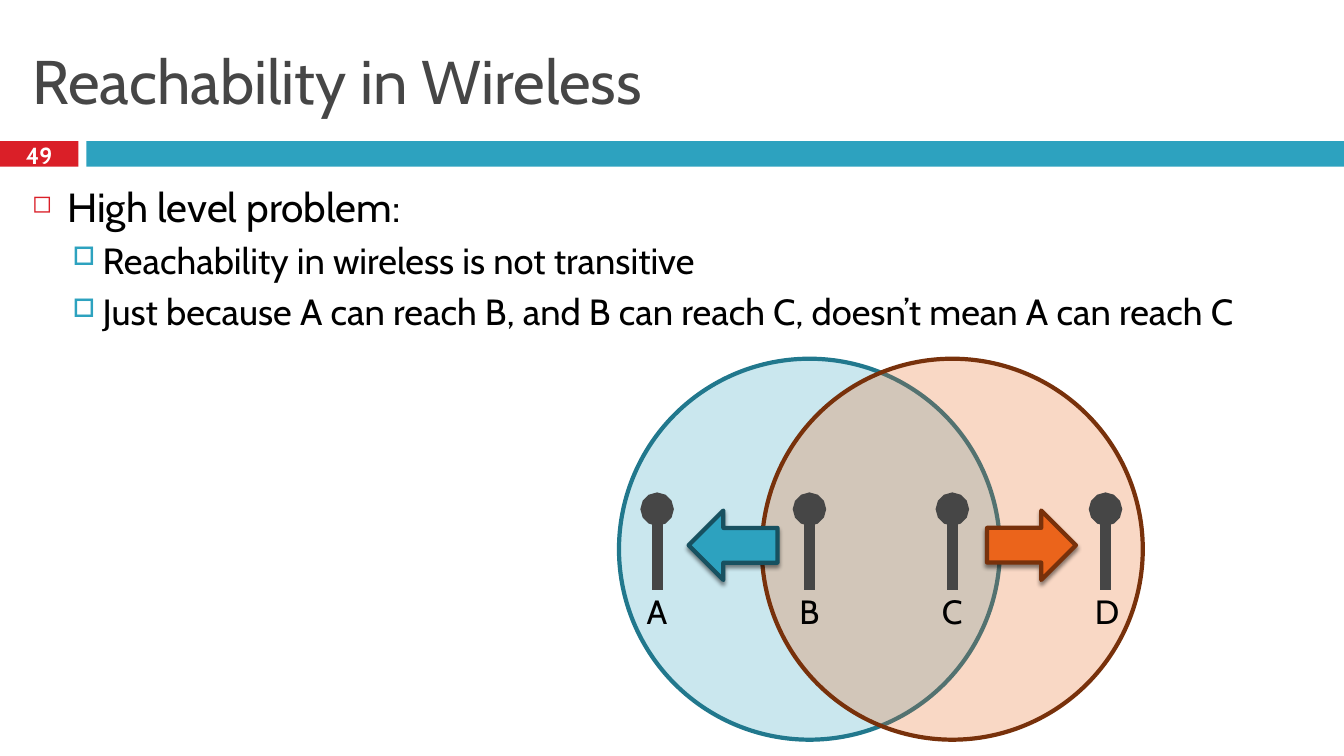
from lxml import etree
from pptx import Presentation
from pptx.dml.color import RGBColor
from pptx.enum import shapes, text
from pptx.oxml.ns import qn
from pptx.util import Cm, Pt

FONT = "Cabin"
WHITE = RGBColor(0xFF, 0xFF, 0xFF)
BLACK = RGBColor(0, 0, 0)
GRAY = RGBColor(0x46, 0x46, 0x46)
RED = RGBColor(0xDA, 0x1F, 0x28)
TEAL = RGBColor(0x2D, 0xA2, 0xBF)
TEAL_EDGE = RGBColor(0x21, 0x78, 0x8D)
TEAL_DARK = RGBColor(0x17, 0x51, 0x60)
ORANGE = RGBColor(0xEB, 0x64, 0x1B)
ORANGE_DARK = RGBColor(0x78, 0x31, 0x0B)

# text, size, space before, indent (cm), hanging (cm), bullet, its colour, its size in %
BULLETS = [("High level problem:", 29, 7, 0.89, 0.89, "◻", RED, 60)] + [
    (line, 26, 5.5, 1.78, 0.76, "□", TEAL, 70)
    for line in (
        "Reachability in wireless is not transitive",
        "Just because A can reach B, and B can reach C, doesn’t mean A can reach C",
    )
]
STATIONS = [("A", 16.56), ("B", 20.4), ("C", 24.0), ("D", 27.86)]


def sub(parent, tag, **attrs):
    el = etree.SubElement(parent, qn(tag))
    for name, value in attrs.items():
        el.set(name, str(value))
    return el


def add_run(p, words, size, color=BLACK, bold=False):
    r = p.add_run()
    r.text = words
    r.font.name, r.font.size, r.font.bold = FONT, Pt(size), bold
    r.font.color.rgb = color


def add_frame(parent, x, y, w, h, wrap=True, anchor=text.MSO_ANCHOR.TOP):
    tf = parent.add_textbox(Cm(x), Cm(y), Cm(w), Cm(h)).text_frame
    tf.word_wrap, tf.vertical_anchor = wrap, anchor
    return tf


def add_text(parent, words, x, y, w, h, size, align=text.PP_ALIGN.LEFT,
             wrap=True, anchor=text.MSO_ANCHOR.MIDDLE, **font):
    tf = add_frame(parent, x, y, w, h, wrap, anchor)
    tf.paragraphs[0].alignment = align
    add_run(tf.paragraphs[0], words, size, **font)


def add_bullets(parent, items, x, y, w, h):
    tf = add_frame(parent, x, y, w, h)
    for i, (words, size, before, indent, hang, char, color, pct) in enumerate(items):
        p = tf.add_paragraph() if i else tf.paragraphs[0]
        p.space_before = Pt(before)
        p.level = int(i > 0)
        pPr = p._p.get_or_add_pPr()
        pPr.set("marL", str(Cm(indent)))
        pPr.set("indent", str(-Cm(hang)))
        sub(sub(pPr, "a:buClr"), "a:srgbClr", val=color)
        sub(pPr, "a:buSzPct", val=pct * 1000)
        sub(pPr, "a:buChar", char=char)
        add_run(p, words, size)


def add_shape(parent, kind, x, y, w, h, fill, edge=None):
    sp = parent.add_shape(kind, Cm(x), Cm(y), Cm(w), Cm(h))
    sp.shadow.inherit = False
    sp.fill.solid()
    sp.fill.fore_color.rgb = fill
    if edge is None:
        sp.line.fill.background()
    else:
        sp.line.color.rgb, sp.line.width = edge, Pt(3)
    return sp


def add_range(parent, x, fill, edge):
    """Translucent circle showing how far a station's signal carries."""
    sp = add_shape(parent, shapes.MSO_SHAPE.OVAL, x, 9.04, 9.6, 9.6, fill, edge)
    color = sp._element.spPr.find(qn("a:solidFill")).find(qn("a:srgbClr"))
    sub(color, "a:alpha", val=25000)


def add_arrow(parent, x, rotation, fill, edge):
    sp = add_shape(parent, shapes.MSO_SHAPE.UP_ARROW, x, 12.62, 1.75, 2.24, fill, edge)
    sp.rotation = rotation
    shadow = sub(sp._element.spPr.find(qn("a:effectLst")), "a:outerShdw",
                 blurRad=Pt(3), dist=Pt(2.4), dir=90 * 60000, rotWithShape=0)
    sub(sub(shadow, "a:srgbClr", val=BLACK), "a:alpha", val=45000)


def add_station(parent, name, x):
    """Antenna with a round head, grouped with its letter."""
    group = parent.add_group_shape().shapes
    mast = group.add_connector(shapes.MSO_CONNECTOR.STRAIGHT,
                               Cm(x), Cm(12.83), Cm(x), Cm(14.86))
    mast.line.color.rgb, mast.line.width = GRAY, Pt(8)
    sub(mast.line._get_or_add_ln(), "a:headEnd", type="oval")
    sub(mast._element.spPr, "a:effectLst")
    add_text(group, name, x - 0.52, 14.76, 1.04, 1.27, 24,
             align=text.PP_ALIGN.CENTER, wrap=False, anchor=text.MSO_ANCHOR.TOP)


def main():
    prs = Presentation()
    prs.slide_width, prs.slide_height = Cm(33.87), Cm(19.05)
    s = prs.slides.add_slide(prs.slide_layouts[6]).shapes

    add_shape(s, shapes.MSO_SHAPE.RECTANGLE, 0, 3.56, 1.98, 0.64, RED)
    add_shape(s, shapes.MSO_SHAPE.RECTANGLE, 2.18, 3.56, 31.69, 0.64, TEAL)
    add_text(s, "Reachability in Wireless", 0.56, 0.64, 32.74, 2.74, 44, color=GRAY)
    add_text(s, "49", 0, 3.48, 1.98, 0.84, 16.6, align=text.PP_ALIGN.CENTER,
             color=WHITE, bold=True)
    add_bullets(s, BULLETS, 0.56, 4.45, 32.74, 14.17)

    add_range(s, 15.6, TEAL, TEAL_EDGE)
    add_range(s, 19.2, ORANGE, ORANGE_DARK)
    add_arrow(s, 17.6, 270, TEAL, TEAL_DARK)
    add_arrow(s, 25.12, 90, ORANGE, ORANGE_DARK)
    for name, x in STATIONS:
        add_station(s, name, x)

    prs.save("out.pptx")


if __name__ == "__main__":
    main()
